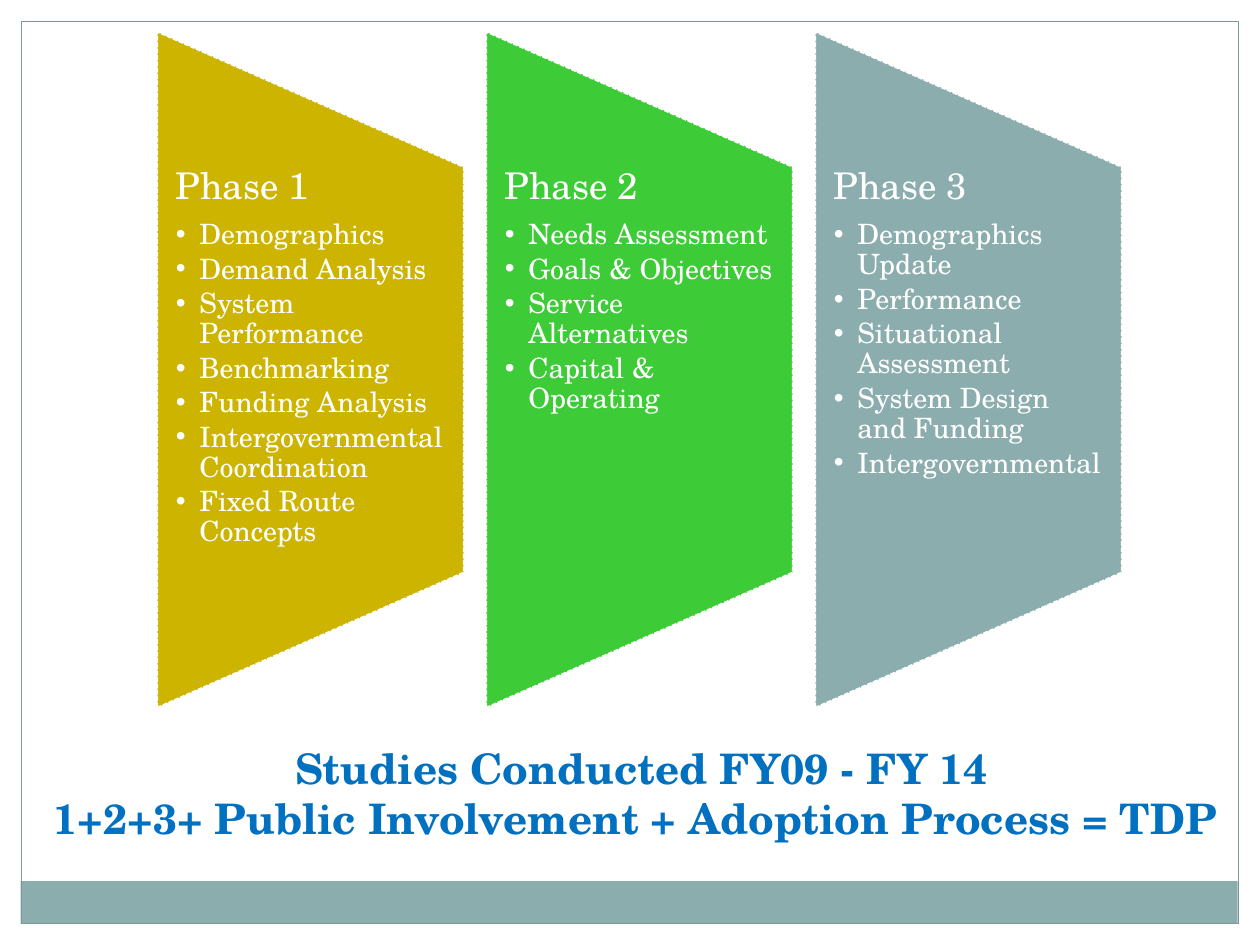
"""Build a slide showing three study phases and how they form the plan."""
from dataclasses import dataclass

from lxml import etree
from pptx import Presentation
from pptx.dml.color import RGBColor
from pptx.enum.dml import MSO_LINE
from pptx.enum.shapes import MSO_SHAPE
from pptx.enum.text import MSO_ANCHOR, MSO_AUTO_SIZE, PP_ALIGN
from pptx.oxml.ns import qn
from pptx.util import Pt

RECT = MSO_SHAPE.RECTANGLE
PANEL = MSO_SHAPE.FLOWCHART_MANUAL_OPERATION
DASH = MSO_LINE.SQUARE_DOT
TOP = MSO_ANCHOR.TOP
NO_FIT = MSO_AUTO_SIZE.NONE
LEFT, CENTER = PP_ALIGN.LEFT, PP_ALIGN.CENTER

WHITE = RGBColor(0xFF, 0xFF, 0xFF)
GOLD = RGBColor(0xCC, 0xB4, 0x00)
GREEN = RGBColor(0x3E, 0xCB, 0x38)
TEAL = RGBColor(0x8C, 0xAD, 0xAE)
FRAME = RGBColor(0x7C, 0x99, 0x9A)
BLUE = RGBColor(0x00, 0x70, 0xC0)
FONT = "TeX Gyre Schola"

PANEL_W, PANEL_H = 175, 386
PANEL_X, PANEL_MID_Y, PITCH = 90, 211.25, 188
LIST_Y, LIST_H = 96, 232
COMPARISON_LAYOUT = 4


@dataclass
class Phase:
    name: str
    color: RGBColor
    topics: list[str]


PHASES = [
    Phase("Phase 1", GOLD, [
        "Demographics", "Demand Analysis", "System Performance", "Benchmarking",
        "Funding Analysis", "Intergovernmental Coordination", "Fixed Route Concepts"]),
    Phase("Phase 2", GREEN, [
        "Needs Assessment", "Goals & Objectives", "Service Alternatives",
        "Capital & Operating"]),
    Phase("Phase 3", TEAL, [
        "Demographics Update", "Performance", "Situational Assessment",
        "System Design and Funding", "Intergovernmental"]),
]
SUMMARY = ["Studies Conducted FY09 - FY 14",
           "1+2+3+ Public Involvement + Adoption Process = TDP "]


def add_text(tf, text: str, *, size: float, color: RGBColor, bold=False,
             align=LEFT, bullet=False, spacing=1.0, after=0.0):
    """Append one formatted paragraph to a text frame."""
    p = tf.paragraphs[0] if not tf.text else tf.add_paragraph()
    p.level = int(bullet)
    pPr = p._p.get_or_add_pPr()
    indent = Pt(13.5) if bullet else 0
    pPr.set("marL", str(indent))
    pPr.set("indent", str(-indent))
    if bullet:
        etree.SubElement(pPr, qn("a:buFont"), typeface="Arial")
        etree.SubElement(pPr, qn("a:buChar"), char="•")
    else:
        etree.SubElement(pPr, qn("a:buNone"))
    p.alignment = align
    p.line_spacing = spacing
    p.space_before, p.space_after = Pt(0), Pt(after)
    r = p.add_run()
    r.text = text
    r.font.name, r.font.size, r.font.bold = FONT, Pt(size), bold
    r.font.color.rgb = color


def add_block(s, kind, x: float, y: float, w: float, h: float, *,
              fill=None, line=None, width=0.75):
    """Draw a flat preset shape."""
    sp = s.shapes.add_shape(kind, Pt(x), Pt(y), Pt(w), Pt(h))
    sp.shadow.inherit = False
    if fill is None:
        sp.fill.background()
    else:
        sp.fill.solid()
        sp.fill.fore_color.rgb = fill
    if line is None:
        sp.line.fill.background()
    else:
        sp.line.color.rgb = line
        sp.line.width = Pt(width)
    return sp


def place(s, sp, x: float, y: float, w: float, h: float, *,
          inset_x=7.2, inset_y=3.6, wrap=True):
    """Bring a placeholder to the front, position it and return its text frame."""
    s.shapes.element.append(sp.element)
    sp.left, sp.top, sp.width, sp.height = Pt(x), Pt(y), Pt(w), Pt(h)
    tf = sp.text_frame
    tf.auto_size, tf.word_wrap, tf.vertical_anchor = NO_FIT, wrap, TOP
    tf.margin_left = tf.margin_right = Pt(inset_x)
    tf.margin_top = tf.margin_bottom = Pt(inset_y)
    return tf


def add_phase(s, sp, phase: Phase, x: float):
    """Draw a phase panel and fill its list placeholder."""
    panel = add_block(s, PANEL, x + (PANEL_W - PANEL_H) / 2, PANEL_MID_Y - PANEL_W / 2,
                      PANEL_H, PANEL_W, fill=phase.color, line=WHITE, width=0.9)
    panel.rotation = 270
    panel.line.dash_style = DASH
    tf = place(s, sp, x, LIST_Y, PANEL_W, LIST_H, inset_x=10.5, inset_y=0)
    add_text(tf, phase.name, size=21, color=WHITE, spacing=0.9, after=7.35)
    for topic in phase.topics:
        add_text(tf, topic, size=16, color=WHITE, bullet=True, spacing=0.9, after=2.4)


def main():
    """Build and save the slide."""
    prs = Presentation()
    prs.slide_width, prs.slide_height = Pt(720), Pt(540)
    s = prs.slides.add_slide(prs.slide_layouts[COMPARISON_LAYOUT])
    title, *bodies = s.placeholders
    add_block(s, RECT, 11.75, 503.5, 695.5, 24.5, fill=TEAL)
    add_block(s, RECT, 12.25, 12.25, 695.5, 515.5, line=FRAME)
    for i, (phase, sp) in enumerate(zip(PHASES, bodies)):
        add_phase(s, sp, phase, PANEL_X + i * PITCH)
    for sp in bodies[len(PHASES):]:
        s.shapes.element.remove(sp.element)
    tf = place(s, title, 19.5, 420.5, 694, 65.5, wrap=False)
    for text in SUMMARY:
        add_text(tf, text, size=24, color=BLUE, bold=True, align=CENTER)
    prs.save("out.pptx")


if __name__ == "__main__":
    main()
